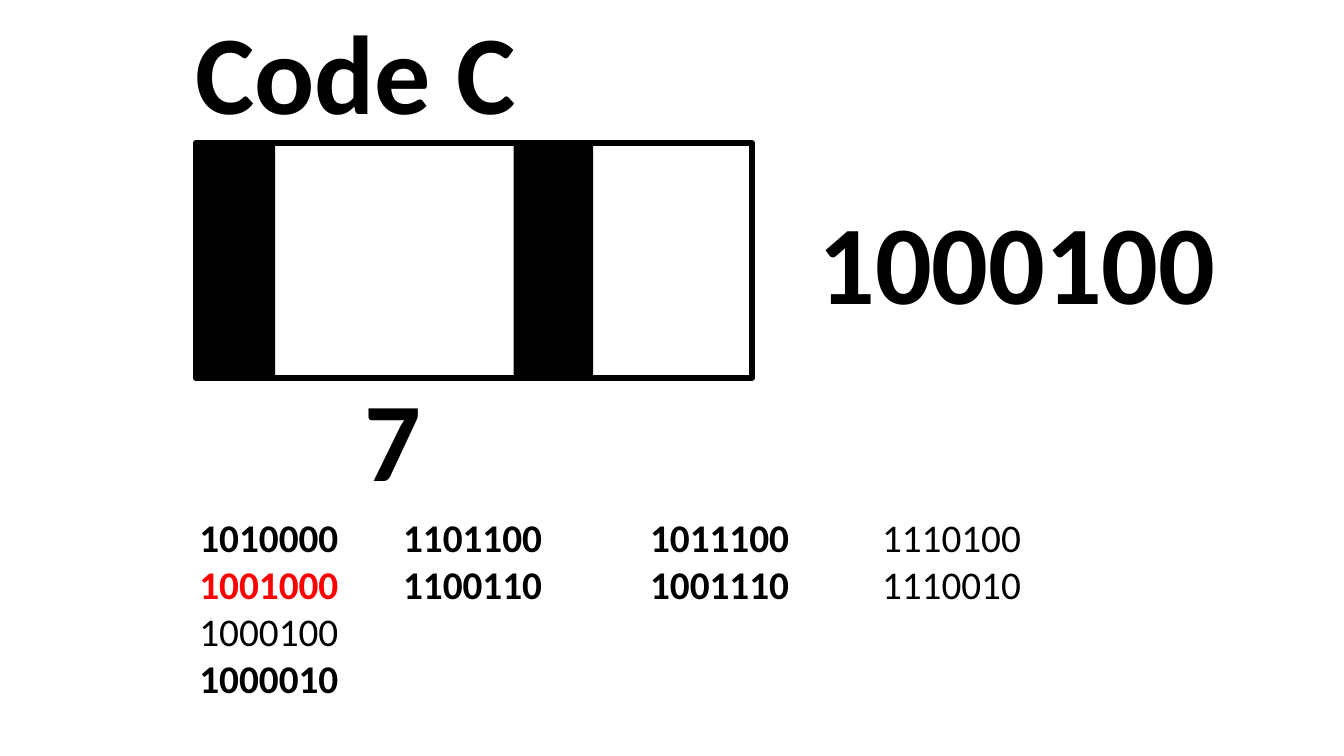
from dataclasses import dataclass

from pptx import Presentation
from pptx.dml.color import RGBColor
from pptx.enum import shapes, text
from pptx.util import Inches, Pt


@dataclass(frozen=True)
class Theme:
    """Colours, font and type sizes of the slide."""
    ink: RGBColor = RGBColor(0, 0, 0)
    accent: RGBColor = RGBColor(255, 0, 0)
    font: str = "Calibri"
    display: int = 80
    body: int = 28
    outline: int = 4


THEME = Theme()
CODE = "1000100"
PLAIN = {"1000100", "1110100", "1110010"}
HIGHLIGHTED = {"1001000"}


def add_text(slide, box, lines, size=THEME.body, plain=(), highlighted=()):
    """Write one paragraph per line, bold unless the line is listed as plain."""
    label = slide.shapes.add_textbox(*map(Inches, box))
    frame = label.text_frame
    frame.word_wrap = True
    frame.auto_size = text.MSO_AUTO_SIZE.SHAPE_TO_FIT_TEXT
    for index, line in enumerate(lines):
        paragraph = frame.paragraphs[0] if index == 0 else frame.add_paragraph()
        run = paragraph.add_run()
        run.text = line
        run.font.name = THEME.font
        run.font.size = Pt(size)
        run.font.bold = line not in plain
        run.font.color.rgb = THEME.accent if line in highlighted else THEME.ink


def add_rectangle(slide, box, filled):
    """Draw a solid bar, or an empty outlined frame."""
    rectangle = slide.shapes.add_shape(
        shapes.MSO_SHAPE.RECTANGLE, *map(Inches, box))
    rectangle.shadow.inherit = False
    if filled:
        rectangle.fill.solid()
        rectangle.fill.fore_color.rgb = THEME.ink
        rectangle.line.fill.background()
    else:
        rectangle.fill.background()
        rectangle.line.color.rgb = THEME.ink
        rectangle.line.width = Pt(THEME.outline)


def add_barcode(slide, box, code):
    """Frame the box and fill one module for each 1 in the code."""
    left, top, width, height = box
    module = width / len(code)
    add_rectangle(slide, box, filled=False)
    for position, bit in enumerate(code):
        if bit == "1":
            bar = (left + position * module, top, module, height)
            add_rectangle(slide, bar, filled=True)


def add_headings(slide, box, code):
    """Place the title above, the digit below and the code beside the box."""
    left, top, width, _ = box
    height = 1.45
    add_text(slide, (left + 1.58, top + 2.2, 1, height), ["7"], THEME.display)
    add_text(slide, (left - 0.1, top - 1.44, width + 0.1, height),
             ["Code C"], THEME.display)
    add_text(slide, (left + width + 0.56, top + 0.44, 4.3, height),
             [code], THEME.display)


def add_code_lists(slide, box):
    """Set the candidate codes in columns across the box."""
    left, top, width, height = box
    columns = [
        (0, ["1010000", "1001000", "1000100", "1000010"]),
        (2.02, ["1101100", "1100110"]),
        (4.47, ["1011100", "1001110"]),
        (6.77, ["1110100", "1110010"]),
    ]
    for offset, codes in columns:
        column = (left + offset, top, width - 6.77, height * len(codes) / 4)
        add_text(slide, column, codes, plain=PLAIN, highlighted=HIGHLIGHTED)


def main():
    """Build and save the slide."""
    deck = Presentation()
    deck.slide_width, deck.slide_height = Inches(13.33), Inches(7.5)
    slide = deck.slides.add_slide(deck.slide_layouts[6])
    barcode = (1.94, 1.42, 5.52, 2.33)
    add_barcode(slide, barcode, CODE)
    add_headings(slide, barcode, CODE)
    add_code_lists(slide, (1.88, 5.04, 9.04, 1.99))
    deck.save("out.pptx")


if __name__ == "__main__":
    main()
